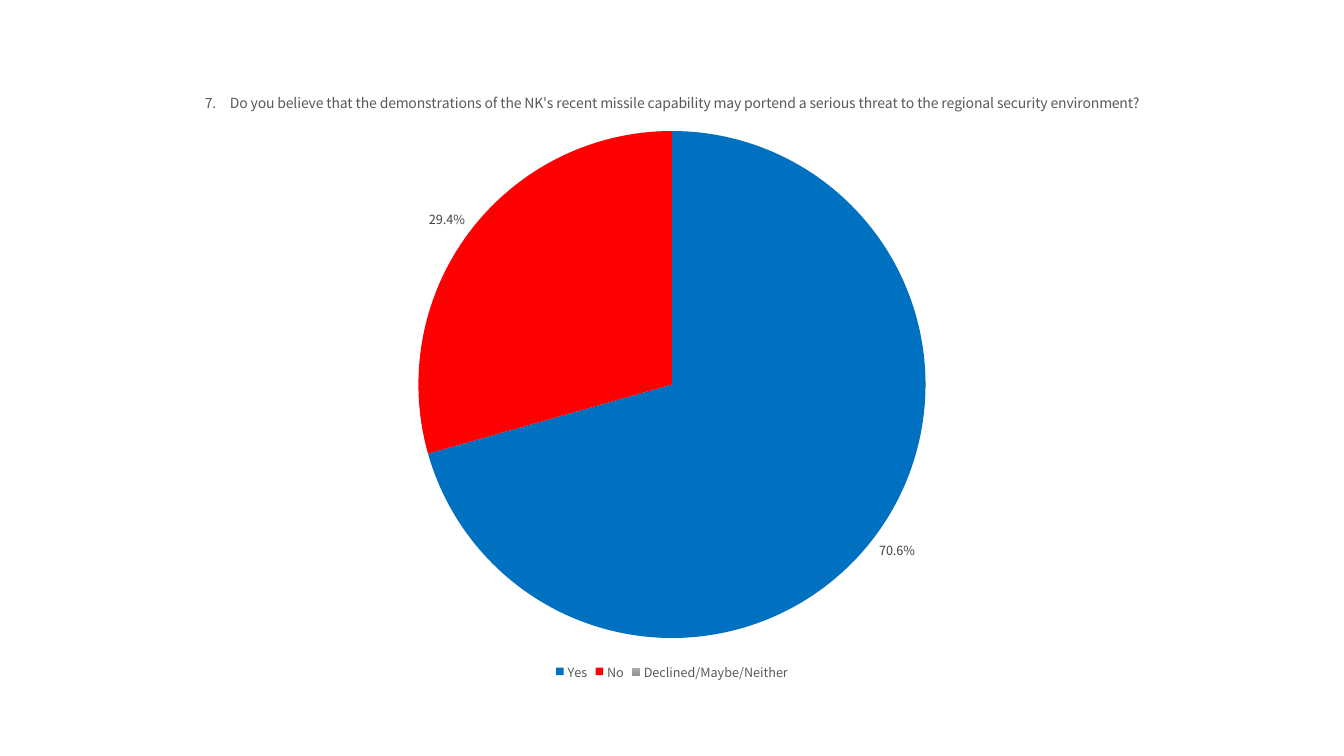
from lxml import etree
from pptx import Presentation
from pptx import util as u
from pptx.chart.data import CategoryChartData
from pptx.dml.color import RGBColor
from pptx.enum import chart as kinds
from pptx.oxml.ns import qn

COLORS = {
    "yes": "0070C0",
    "no": "FF0000",
    "other_light": "AFAFAF",
    "other_dark": "939393",
    "caption": "595959",
    "label": "404040",
}
QUESTION = (
    "7. Do you believe that the demonstrations of the NK's recent missile capability "
    "may portend a serious threat to the regional security environment?"
)
ANSWERS = {"Yes": 0.706, "No": 0.294, "Declined/Maybe/Neither": 0}
CHART_AREA = (0.7, 0.7, 11.93, 6.09)
PIE_AREA = (4.15, 1.3, 5.03, 5.03)


class SurveySlide:
    font_name = "Noto Sans CJK KR"

    def __init__(self, deck):
        self.page = deck.slides.add_slide(deck.slide_layouts[6])

    def color(self, name):
        return RGBColor.from_string(COLORS[name])

    def style_font(self, font, size, color):
        font.name = self.font_name
        font.size = u.Pt(size)
        font.bold = False
        font.color.rgb = self.color(color)

    def add_pie(self, question, answers, area):
        data = CategoryChartData(number_format="0.0%")
        data.categories = list(answers)
        data.add_series(question, list(answers.values()))
        frame = self.page.shapes.add_chart(
            kinds.XL_CHART_TYPE.PIE, *map(u.Inches, area), data
        )
        pie = frame.chart
        pie.font.name = self.font_name
        pie.font.size = u.Pt(10)
        pie.plots[0].vary_by_categories = True
        return pie

    def add_title(self, pie, question):
        pie.has_title = True
        pie.chart_title.include_in_layout = False
        para = pie.chart_title.text_frame.paragraphs[0]
        para.text = question.replace(". ", ".\N{EM SPACE}", 1)
        self.style_font(para.runs[0].font, 10, "caption")

    def add_legend(self, pie):
        pie.has_legend = True
        pie.legend.position = kinds.XL_LEGEND_POSITION.BOTTOM
        pie.legend.include_in_layout = False
        self.style_font(pie.legend.font, 9, "caption")

    def add_labels(self, pie):
        labels = pie.plots[0].series[0].data_labels
        labels.show_value = True
        labels.show_percentage = False
        labels.number_format = "0.0%;;"
        labels.number_format_is_linked = False
        labels.position = kinds.XL_LABEL_POSITION.OUTSIDE_END
        self.style_font(labels.font, 9, "label")

    def color_slices(self, pie):
        points = pie.plots[0].series[0].points
        for index, name in enumerate(("yes", "no")):
            fill = points[index].format.fill
            fill.solid()
            fill.fore_color.rgb = self.color(name)
        fill = points[2].format.fill
        fill.gradient()
        fill.gradient_angle = 270
        for stop, name in zip(fill.gradient_stops, ("other_light", "other_dark")):
            stop.color.rgb = self.color(name)

    def place_pie(self, pie, area, pie_area):
        left, top, width, height = area
        x, y, w, h = pie_area
        shares = {
            "x": (x - left) / width,
            "y": (y - top) / height,
            "w": w / width,
            "h": h / height,
        }
        plot_area = pie.plots[0]._element.getparent()
        for layout in plot_area.findall(qn("c:layout")):
            plot_area.remove(layout)
        layout = etree.Element(qn("c:layout"))
        manual = etree.SubElement(layout, qn("c:manualLayout"))
        settings = {"layoutTarget": "inner", "xMode": "edge", "yMode": "edge", **shares}
        for tag, value in settings.items():
            etree.SubElement(manual, qn(f"c:{tag}")).set("val", str(value))
        plot_area.insert(0, layout)


def main():
    deck = Presentation()
    deck.slide_width, deck.slide_height = u.Inches(13.33), u.Inches(7.5)
    survey = SurveySlide(deck)
    pie = survey.add_pie(QUESTION, ANSWERS, CHART_AREA)
    survey.add_title(pie, QUESTION)
    survey.add_legend(pie)
    survey.add_labels(pie)
    survey.color_slices(pie)
    survey.place_pie(pie, CHART_AREA, PIE_AREA)
    deck.save("out.pptx")


if __name__ == "__main__":
    main()
